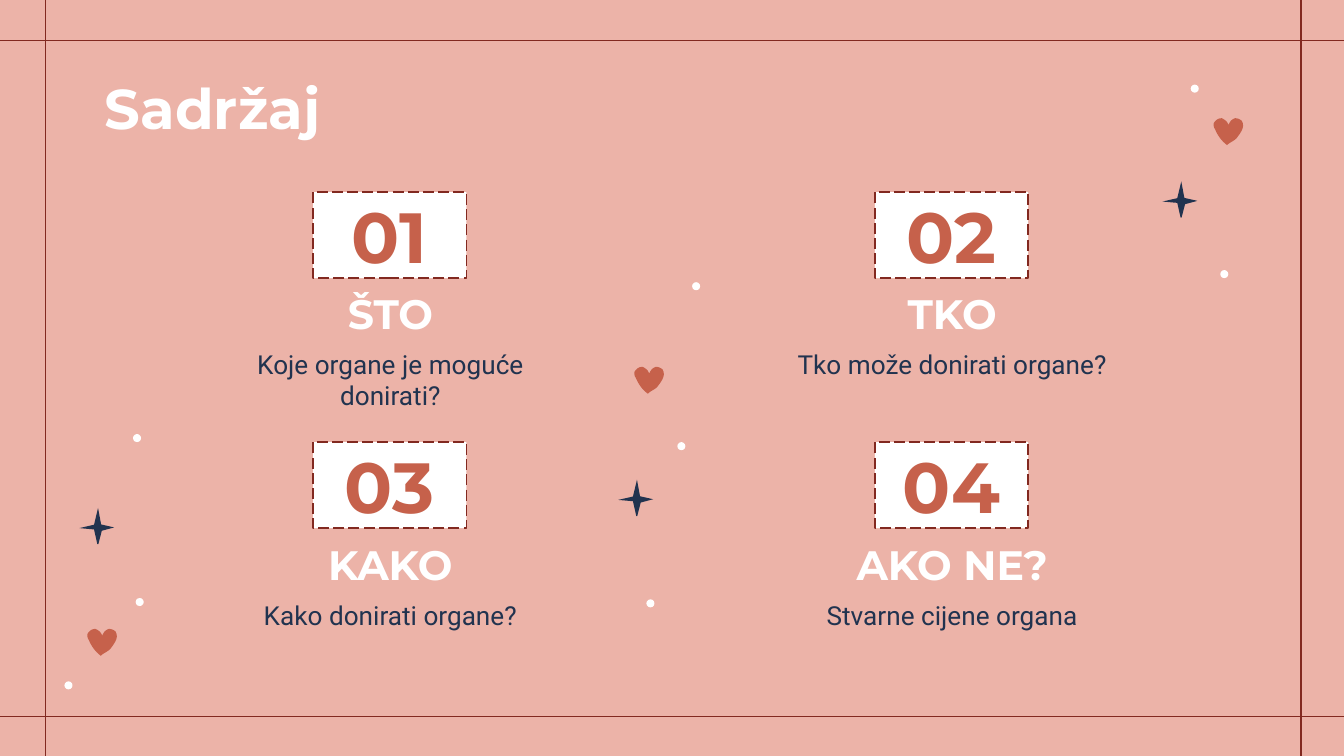
from lxml import etree
from pptx import Presentation
from pptx.dml.color import RGBColor
from pptx.enum.dml import MSO_LINE
from pptx.enum.shapes import MSO_CONNECTOR, MSO_SHAPE
from pptx.enum.text import MSO_ANCHOR, PP_ALIGN
from pptx.oxml.ns import qn
from pptx.util import Inches, Pt

STRAIGHT = MSO_CONNECTOR.STRAIGHT
RECT, OVAL = MSO_SHAPE.RECTANGLE, MSO_SHAPE.OVAL
TOP, MIDDLE, BOTTOM = MSO_ANCHOR.TOP, MSO_ANCHOR.MIDDLE, MSO_ANCHOR.BOTTOM
LEFT, CENTER = PP_ALIGN.LEFT, PP_ALIGN.CENTER
LONG_DASH = MSO_LINE.LONG_DASH

COLORS = {
    "background": "ECB3A8",
    "guide": "822920",
    "accent": "C6614B",
    "navy": "21334F",
    "white": "FFFFFF",
}
RGB = {name: RGBColor.from_string(value) for name, value in COLORS.items()}
WIDTH = 10
HEIGHT = WIDTH * 9 / 16


def write(shape, text, size, font, color, bold=True, anchor=TOP, align=CENTER):
    tf = shape.text_frame
    tf.word_wrap = True
    tf.vertical_anchor = anchor
    tf.margin_left = tf.margin_right = Inches(0.1)
    tf.margin_top = tf.margin_bottom = Inches(0.1)
    p = tf.paragraphs[0]
    p.alignment = align
    r = p.add_run()
    r.text = text
    r.font.name = font
    r.font.size = Pt(size)
    r.font.bold = bold
    r.font.color.rgb = RGB[color]


def paint(shape, color):
    shape.shadow.inherit = False
    shape.fill.solid()
    shape.fill.fore_color.rgb = RGB[color]
    shape.line.fill.background()


prs = Presentation()
prs.slide_width, prs.slide_height = Inches(WIDTH), Inches(HEIGHT)
s = prs.slides.add_slide(prs.slide_layouts[5])
s.background.fill.solid()
s.background.fill.fore_color.rgb = RGB["background"]

guides = [(-0.02, y, WIDTH, y) for y in (0.3, 5.33)]
guides += [(x, 0, x, HEIGHT) for x in (0.34, 9.68)]
for ends in guides:
    line = s.shapes.add_connector(STRAIGHT, *[Inches(v) for v in ends])
    line.line.color.rgb = RGB["guide"]
    line.line.width = Pt(0.75)
    etree.SubElement(line._element.spPr, qn("a:effectLst"))

title = s.shapes.title
title.left, title.top = Inches(0.68), Inches(0.45)
title.width, title.height = Inches(8.64), Inches(0.63)
write(title, "Sadržaj", 30, "Montserrat", "white", align=LEFT)

topics = [
    ("ŠTO", "Koje organe je moguće donirati?"),
    ("TKO", "Tko može donirati organe?"),
    ("KAKO", "Kako donirati organe?"),
    ("AKO NE?", "Stvarne cijene organa"),
]
for i, (heading, question) in enumerate(topics):
    row, col = divmod(i, 2)
    left = 1.52 + 4.18 * col
    box_top = 1.43 + 1.86 * row
    text_top = 2.06 + 1.87 * row

    number = s.shapes.add_shape(RECT, Inches(left + 0.81), Inches(box_top),
                                Inches(1.14), Inches(0.64))
    paint(number, "white")
    number.line.color.rgb = RGB["guide"]
    number.line.width = Pt(0.75)
    number.line.dash_style = LONG_DASH
    write(number, f"{i + 1:02}", 38, "Montserrat", "accent", anchor=MIDDLE)

    label = s.shapes.add_textbox(Inches(left), Inches(text_top),
                                 Inches(2.77), Inches(0.55))
    write(label, heading, 22, "Montserrat", "white", anchor=BOTTOM)

    detail = s.shapes.add_textbox(Inches(left), Inches(text_top + 0.43),
                                  Inches(2.77), Inches(0.68))
    write(detail, question, 14, "Roboto", "navy", bold=False)

heart_curves = [
    ((13, 1), (12, 3), (11, 5)),
    ((10, 2), (8, 1), (6, 0)),
    ((3, 0), (1, 2), (0, 4)),
    ((0, 5), (0, 7), (1, 8)),
    ((3, 13), (6, 17), (10, 20)),
    ((12, 18), (15, 17), (17, 15)),
    ((19, 12), (24, 7), (21, 2)),
    ((20, 1), (18, 0), (16, 0)),
]
heart = [(16, 0)]
for c1, c2, end in heart_curves:
    start = heart[-1]
    for t in [step / 8 for step in range(1, 9)]:
        u = 1 - t
        heart.append(tuple(
            u**3 * a + 3 * u**2 * t * b + 3 * u * t**2 * c + t**3 * d
            for a, b, c, d in zip(start, c1, c2, end)))

star = [(15, 0), (12, 12.5), (1, 15), (12, 16), (14.5, 27), (15.2, 27),
        (17.8, 17), (27, 14.5), (17.3, 12.3)]

ornaments = [
    (heart, "accent", [(9.03, 0.88), (4.72, 2.73), (0.65, 4.68)]),
    (star, "navy", [(8.64, 1.35), (4.59, 3.57), (0.58, 3.78)]),
]
for outline, color, places in ornaments:
    points = [(x * 100, y * 100) for x, y in outline]
    for left, top in places:
        builder = s.shapes.build_freeform(*points[0], scale=Inches(1) / 10000)
        builder.add_line_segments(points[1:], close=True)
        paint(builder.convert_to_shape(Inches(left), Inches(top)), color)

dots = [(4.81, 4.46), (5.04, 3.29), (5.15, 2.1), (9.08, 2.01), (1.01, 4.45),
        (0.99, 3.23), (0.48, 5.07), (8.86, 0.63)]
for left, top in dots:
    dot = s.shapes.add_shape(OVAL, Inches(left), Inches(top),
                             Inches(0.06), Inches(0.06))
    paint(dot, "white")

prs.save("out.pptx")
